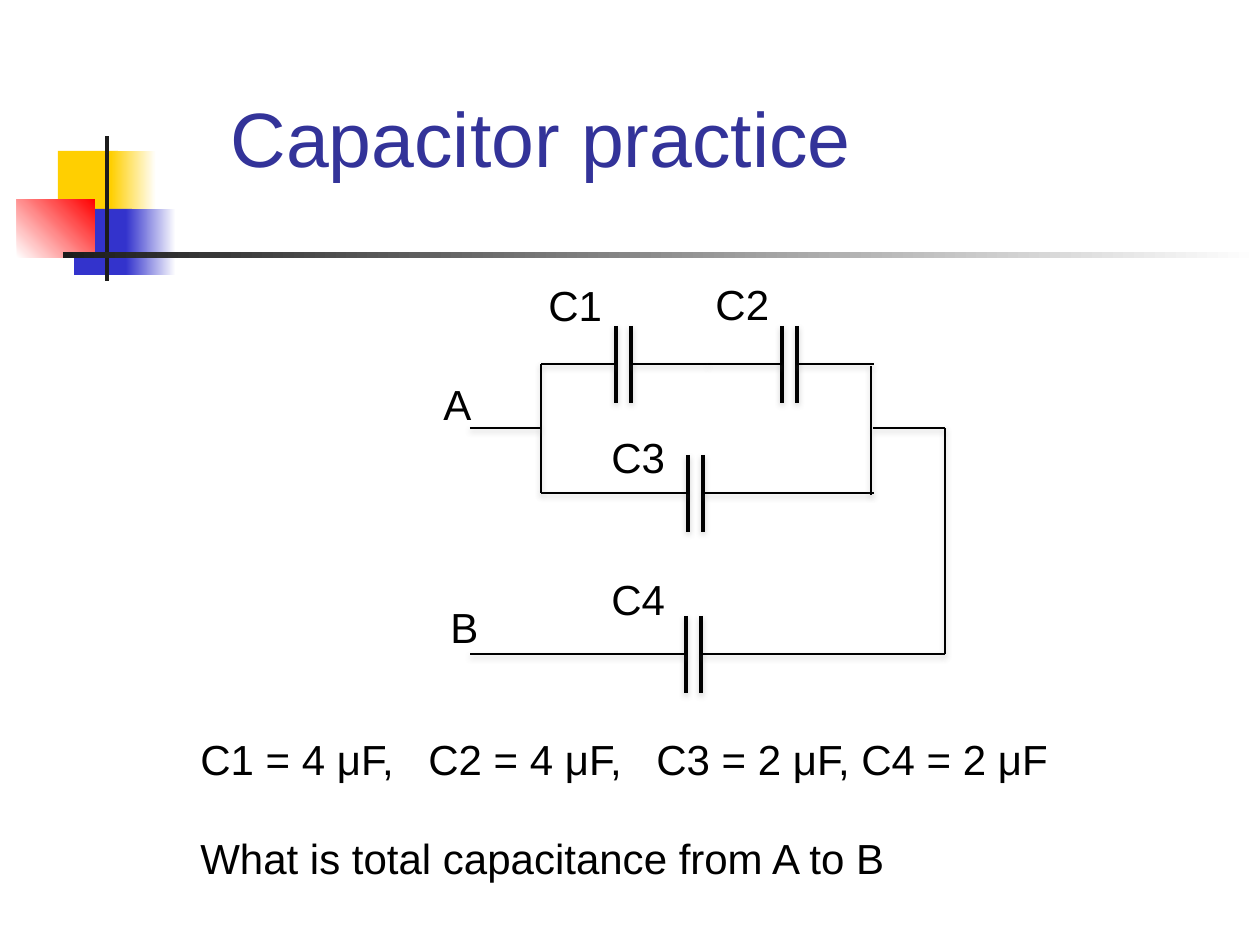
from lxml import etree
from pptx import Presentation
from pptx.dml.color import RGBColor
from pptx.enum.shapes import MSO_CONNECTOR, MSO_SHAPE
from pptx.enum.text import MSO_ANCHOR
from pptx.oxml.ns import qn
from pptx.util import Emu, Pt

STRAIGHT = MSO_CONNECTOR.STRAIGHT
RECTANGLE = MSO_SHAPE.RECTANGLE
TOP, BOTTOM = MSO_ANCHOR.TOP, MSO_ANCHOR.BOTTOM
FONT = "Arial"
BLACK, WHITE, YELLOW, BLUE = "000000", "FFFFFF", "FFCF01", "3333CC"
RED, CHARCOAL, TITLE_BLUE = "FF0000", "1C1C1C", "333399"
PLATE_GAP = 15
PLATE_REACH = 38

ORNAMENTS = [
    ((58, 151, 60, 66), [YELLOW], 0),
    ((111, 151, 45, 66), [YELLOW, WHITE], 0),
    ((74, 209, 58, 66), [BLUE], 0),
    ((126, 209, 50, 66), [BLUE, WHITE], 0),
    ((17, 199, 78, 59), [WHITE, RED], 45),
    ((105, 136, 4, 145), [CHARCOAL], 0),
    ((63, 252, 1197, 6), [CHARCOAL, WHITE], 0),
]
CAPACITORS = [
    (616, 364, 541, 708),
    (782, 364, 708, 874),
    (688, 493, 541, 874),
    (686, 654, 470, 945),
]
WIRES = [
    (541, 364, 541, 493),
    (871, 366, 871, 495),
    (470, 428, 541, 428),
    (873, 428, 945, 428),
    (945, 428, 945, 654),
]
LABELS = [
    ("A", 431, 372, 53),
    ("B", 438, 595, 53),
    ("C1", 536, 273, 79),
    ("C2", 703, 272, 79),
    ("C3", 599, 425, 79),
    ("C4", 599, 567, 79),
]


def px(length):
    """Turn pixels into EMU."""
    return Emu(round(length * 914400 / 126))


def color(hex_code):
    """Turn a hex string into a colour."""
    return RGBColor.from_string(hex_code)


def add_block(page, bounds, colors, angle):
    """Add a borderless rectangle with a solid or gradient fill."""
    block = page.shapes.add_shape(RECTANGLE, *map(px, bounds))
    block.shadow.inherit = False
    block.line.fill.background()
    if len(colors) == 1:
        block.fill.solid()
        block.fill.fore_color.rgb = color(colors[0])
        return
    block.fill.gradient()
    block.fill.gradient_angle = angle
    for stop, hex_code in zip(block.fill.gradient_stops, colors):
        stop.color.rgb = color(hex_code)


def add_shadow(line):
    """Give a line a soft grey shadow below it."""
    effects = etree.SubElement(line._element.spPr, qn("a:effectLst"))
    shadow = etree.SubElement(effects, qn("a:outerShdw"), blurRad="40000",
                              dist="20000", dir="5400000", rotWithShape="0")
    tint = etree.SubElement(shadow, qn("a:srgbClr"), val="808080")
    etree.SubElement(tint, qn("a:alpha"), val="38000")


def add_wire(page, ends, width=1):
    """Add a straight black line between two points."""
    wire = page.shapes.add_connector(STRAIGHT, *map(px, ends))
    wire.line.color.rgb = color(BLACK)
    wire.line.width = Pt(width)
    add_shadow(wire)


def add_capacitor(page, x, y, left, right):
    """Add two plates with a lead on each side."""
    far = x + PLATE_GAP
    for plate in (x, far):
        add_wire(page, (plate, y - PLATE_REACH, plate, y + PLATE_REACH + 1), 2)
    add_wire(page, (x, y, left, y))
    add_wire(page, (right, y, far, y))


def add_text(page, bounds, lines, size=24, hex_code=BLACK, anchor=TOP, wrap=True):
    """Add a text box with one paragraph per line and return its paragraphs."""
    frame = page.shapes.add_textbox(*map(px, bounds)).text_frame
    frame.word_wrap = wrap
    frame.vertical_anchor = anchor
    for index, line in enumerate(lines):
        para = frame.add_paragraph() if index else frame.paragraphs[0]
        span = para.add_run()
        span.text = line
        span.font.name = FONT
        span.font.size = Pt(size)
        span.font.color.rgb = color(hex_code)
    return frame.paragraphs


def add_tab_stops(para, positions):
    """Set left tab stops on a paragraph."""
    stops = etree.SubElement(para._p.get_or_add_pPr(), qn("a:tabLst"))
    for position in positions:
        etree.SubElement(stops, qn("a:tab"), pos=str(px(position)), algn="l")


def main():
    """Build the capacitor practice slide."""
    deck = Presentation()
    deck.slide_width, deck.slide_height = px(1260), px(945)
    page = deck.slides.add_slide(deck.slide_layouts[6])
    for bounds, colors, angle in ORNAMENTS:
        add_block(page, bounds, colors, angle)
    add_text(page, (218, 31, 1042, 158), ["Capacitor practice"],
             44, TITLE_BLUE, BOTTOM)
    values, question = add_text(page, (188, 727, 893, 165), [
        "C1 = 4 μF,\tC2 = 4 μF,\tC3 = 2 μF, C4 = 2 μF",
        "What is total capacitance from A to B",
    ])
    add_tab_stops(values, (228, 456))
    question.space_before = Pt(28)
    for capacitor in CAPACITORS:
        add_capacitor(page, *capacitor)
    for wire in WIRES:
        add_wire(page, wire)
    for name, left, top, width in LABELS:
        add_text(page, (left, top, width, 63), [name], wrap=False)
    deck.save("out.pptx")


if __name__ == "__main__":
    main()
